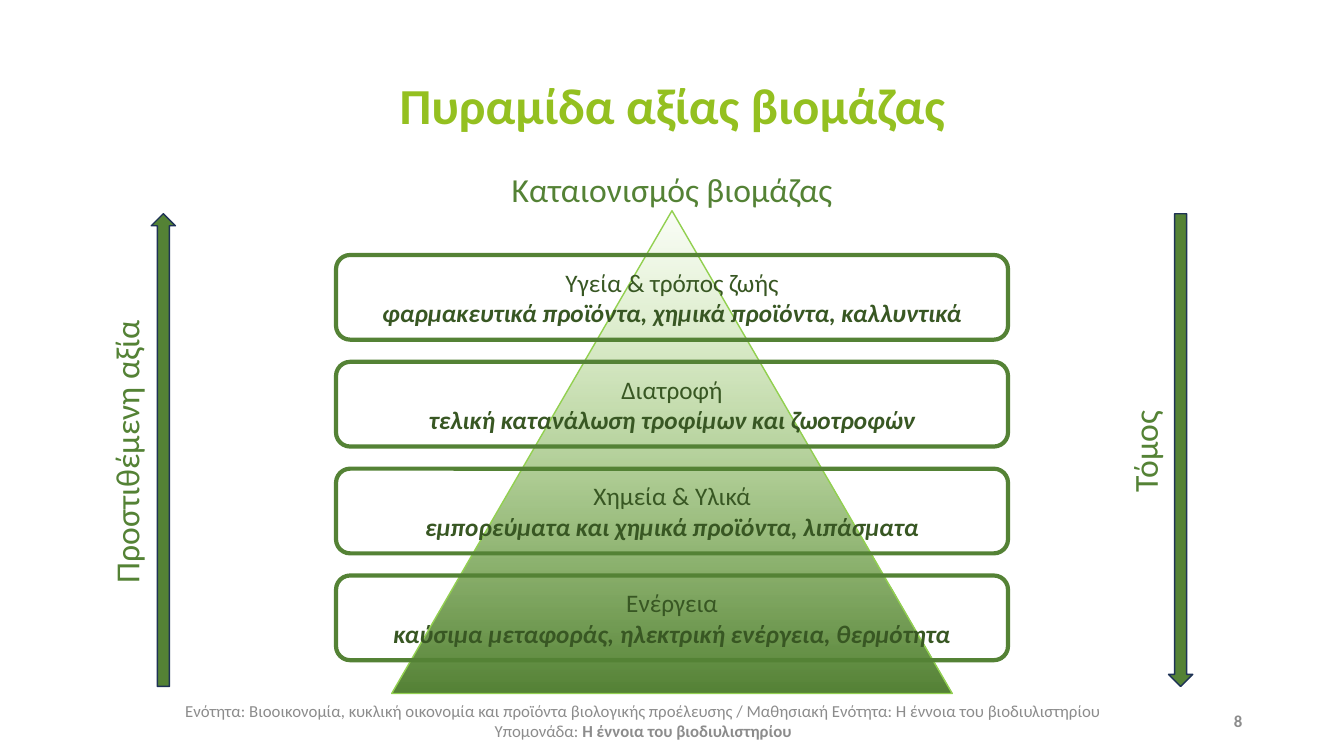
from lxml import etree
from pptx import Presentation
from pptx.dml.color import RGBColor
from pptx.enum.shapes import MSO_SHAPE
from pptx.enum.text import MSO_ANCHOR, PP_ALIGN
from pptx.oxml.ns import qn
from pptx.util import Inches, Pt

CENTER, RIGHT = PP_ALIGN.CENTER, PP_ALIGN.RIGHT
TOP, MIDDLE = MSO_ANCHOR.TOP, MSO_ANCHOR.MIDDLE
TRIANGLE, ROUNDED = MSO_SHAPE.ISOSCELES_TRIANGLE, MSO_SHAPE.ROUNDED_RECTANGLE
DOWN_ARROW = MSO_SHAPE.DOWN_ARROW

# Content
TITLE = "Πυραμίδα αξίας βιομάζας"
APEX = "Καταιονισμός βιομάζας"
LEVELS = [
    ("Υγεία & τρόπος ζωής", "φαρμακευτικά προϊόντα, χημικά προϊόντα, καλλυντικά"),
    ("Διατροφή", "τελική κατανάλωση τροφίμων και ζωοτροφών"),
    ("Χημεία & Υλικά", "εμπορεύματα και χημικά προϊόντα, λιπάσματα"),
    ("Ενέργεια", "καύσιμα μεταφοράς, ηλεκτρική ενέργεια, θερμότητα"),
]
# Label, label centre, arrow left edge, arrow rotation
AXES = [("Τόμος", 11.35, 11.59, 0), ("Προστιθέμενη αξία", 1.25, 1.5, 180)]
FOOTER = [
    [("Ενότητα: Βιοοικονομία, κυκλική οικονομία και προϊόντα βιολογικής προέλευσης"
      " / Μαθησιακή Ενότητα: Η έννοια του βιοδιυλιστηρίου", "")],
    [("Υπομονάδα: ", ""), ("Η έννοια του βιοδιυλιστηρίου", "b")],
]
PAGE_NUMBER = "8"

# Palette and layout
FONT = "Calibri"
LIME, LEAF, GREEN, FOREST = "94C020", "92D050", "548235", "385723"
NAVY, GREY = "1E3256", "8C8C8C"
WIDTH, HEIGHT = 13.33, 7.5
LEVEL_WIDTH, LEVEL_HEIGHT = WIDTH / 2, 0.84
LEVEL_TOP, LEVEL_PITCH = 2.53, 1.06
PYRAMID_WIDTH, PYRAMID_TOP, PYRAMID_HEIGHT = 5.56, 2.09, 4.79
ARROW_TOP, ARROW_WIDTH, ARROW_HEIGHT = 2.12, 0.24, 4.69
LABEL_LENGTH, LABEL_HEIGHT, LABEL_TOP = 4.05, 0.5, 4.23


def color(value):
    return RGBColor.from_string(value)


def write(box, paragraphs, size, ink, align=CENTER, anchor=TOP, spacing=None):
    """Each paragraph is a list of (text, style); style may hold b and i."""
    frame = box.text_frame
    frame.word_wrap = True
    frame.vertical_anchor = anchor
    for index, spans in enumerate(paragraphs):
        para = frame.add_paragraph() if index else frame.paragraphs[0]
        para.alignment = align
        if spacing:
            para.line_spacing = spacing
        for text, style in spans:
            span = para.add_run()
            span.text = text
            font = span.font
            font.name, font.size, font.color.rgb = FONT, Pt(size), color(ink)
            font.bold, font.italic = "b" in style, "i" in style


def add_text(page, area, paragraphs, size, ink, rotation=0, **layout):
    box = page.shapes.add_textbox(*map(Inches, area))
    box.rotation = rotation
    write(box, paragraphs, size, ink, **layout)


def add_outlined(page, kind, area, line, weight):
    shape = page.shapes.add_shape(kind, *map(Inches, area))
    shape.shadow.inherit = False
    shape.line.color.rgb = color(line)
    shape.line.width = Pt(weight)
    return shape


def centered(width):
    return (WIDTH - width) / 2


def add_pyramid(page):
    area = (centered(PYRAMID_WIDTH), PYRAMID_TOP, PYRAMID_WIDTH, PYRAMID_HEIGHT)
    pyramid = add_outlined(page, TRIANGLE, area, LEAF, 1)
    pyramid.fill.gradient()
    pyramid.fill.gradient_angle = 270
    for stop, value in zip(pyramid.fill.gradient_stops, (LEAF, GREEN)):
        stop.color.rgb = color(value)
    # The apex fades to 4 % opacity
    apex = next(pyramid.fill._xPr.iter(qn("a:srgbClr")))
    etree.SubElement(apex, qn("a:alpha")).set("val", "4000")


def main():
    deck = Presentation()
    deck.slide_width, deck.slide_height = Inches(WIDTH), Inches(HEIGHT)
    page = deck.slides.add_slide(deck.slide_layouts[6])

    # Title and footer
    add_text(page, (0.92, 0.56, 11.5, 1.02), [[(TITLE, "b")]], 36, LIME,
             anchor=MIDDLE, spacing=0.9)
    add_text(page, (11.92, 6.95, 0.5, 0.4), [[(PAGE_NUMBER, "b")]], 12, GREY,
             align=RIGHT, anchor=MIDDLE)
    add_text(page, (0.92, 6.82, 10.92, 0.66), FOOTER, 12, GREY, anchor=MIDDLE)

    # Pyramid with its caption
    add_pyramid(page)
    left = centered(LEVEL_WIDTH)
    add_text(page, (left, 1.63, LEVEL_WIDTH, LABEL_HEIGHT), [[(APEX, "")]], 24, GREEN)

    # Value levels
    for row, (name, products) in enumerate(LEVELS):
        area = (left, LEVEL_TOP + row * LEVEL_PITCH, LEVEL_WIDTH, LEVEL_HEIGHT)
        level = add_outlined(page, ROUNDED, area, GREEN, 3)
        level.fill.background()
        write(level, [[(name, "")], [(products, "bi")]], 18, FOREST, anchor=MIDDLE)

    # Side arrows with vertical labels
    for label, middle, arrow_left, rotation in AXES:
        area = (arrow_left, ARROW_TOP, ARROW_WIDTH, ARROW_HEIGHT)
        arrow = add_outlined(page, DOWN_ARROW, area, NAVY, 1)
        arrow.fill.solid()
        arrow.fill.fore_color.rgb = color(GREEN)
        arrow.rotation = rotation
        area = (middle - LABEL_LENGTH / 2, LABEL_TOP, LABEL_LENGTH, LABEL_HEIGHT)
        add_text(page, area, [[(label, "")]], 24, GREEN, rotation=270)

    deck.save("out.pptx")


if __name__ == "__main__":
    main()
